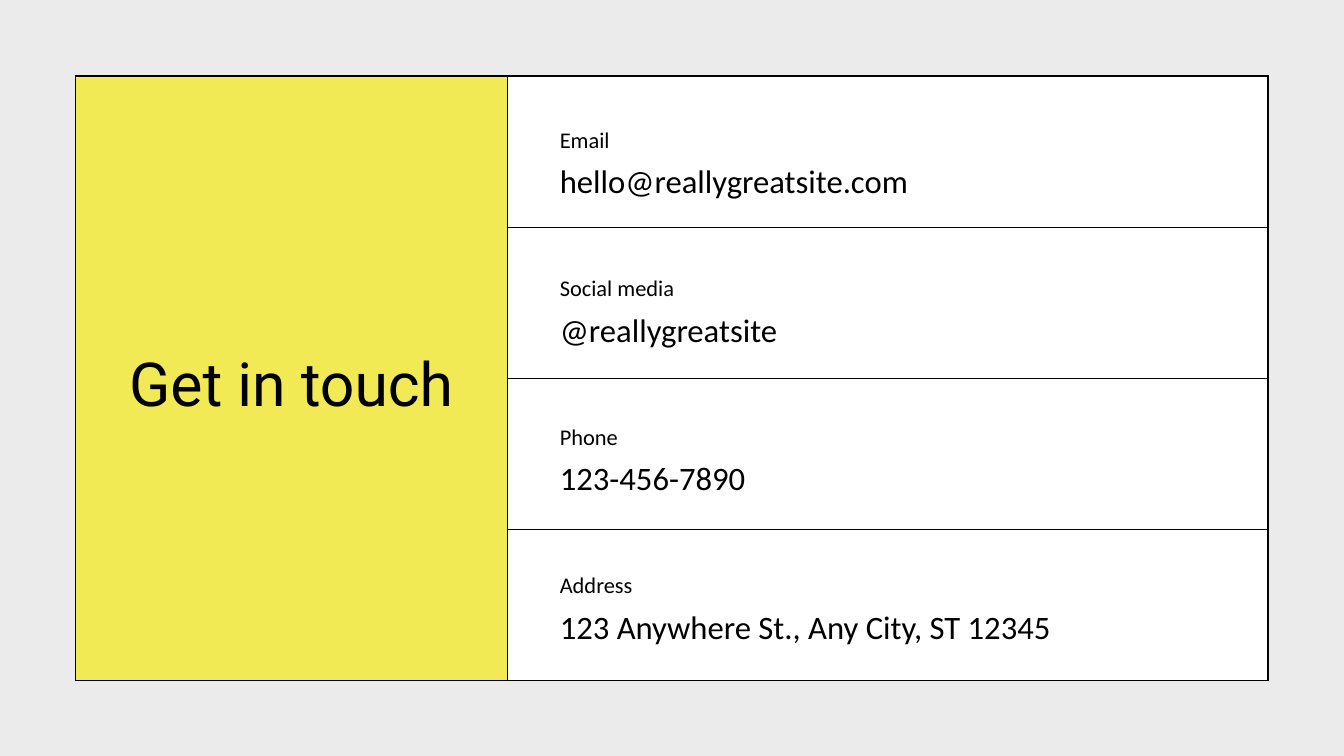
"""Build a contact slide with a title panel and four contact rows."""
from lxml import etree
from pptx import Presentation
from pptx import util as u
from pptx.dml.color import RGBColor
from pptx.enum import text
from pptx.oxml.ns import qn

BLACK = RGBColor(0x00, 0x00, 0x00)
WHITE = RGBColor(0xFF, 0xFF, 0xFF)
YELLOW = RGBColor(0xF1, 0xEA, 0x55)
GREY = RGBColor(0xEB, 0xEB, 0xEB)

COLUMN_WIDTHS = (6.43, 11.32)
ROW_HEIGHT = 2.25
CONTACT_LEFT, CONTACT_TOP, CONTACT_WIDTH = 8.33, 1.67, 9.71
CONTACT_PITCH = 2.21
CONTACTS = (
    ("Email", "hello@reallygreatsite.com"),
    ("Social media", "@reallygreatsite"),
    ("Phone", "123-456-7890"),
    ("Address", "123 Anywhere St., Any City, ST 12345"),
)


class ContactSlide:
    def __init__(self, slide):
        self.slide = slide
        self.title_font = "Roboto"
        self.body_font = "Calibri"
        self.border_width = u.Pt(1.5)

    def background(self, color):
        fill = self.slide.background.fill
        fill.solid()
        fill.fore_color.rgb = color

    def set_text(self, paragraph, words, size, font_name, line_spacing):
        paragraph.text = words
        paragraph.line_spacing = line_spacing
        paragraph.font.size = u.Pt(size)
        paragraph.font.name = font_name
        paragraph.font.color.rgb = BLACK

    def format_cell(self, cell, color):
        properties = cell._tc.get_or_add_tcPr()
        for side in ("lnL", "lnR", "lnT", "lnB"):
            line = etree.SubElement(properties, qn(f"a:{side}"), w=str(self.border_width))
            fill = etree.SubElement(line, qn("a:solidFill"))
            etree.SubElement(fill, qn("a:srgbClr"), val=str(BLACK))
        cell.fill.solid()
        cell.fill.fore_color.rgb = color

    def panel(self, title, row_count):
        frame = self.slide.shapes.add_table(
            row_count, len(COLUMN_WIDTHS), u.Inches(1.12), u.Inches(1.13),
            u.Inches(sum(COLUMN_WIDTHS)), u.Inches(row_count * ROW_HEIGHT))
        table = frame.table
        table.first_row = table.horz_banding = False
        for column, width in zip(table.columns, COLUMN_WIDTHS):
            column.width = u.Inches(width)
        for row in table.rows:
            row.height = u.Inches(ROW_HEIGHT)
            for cell, color in zip(row.cells, (YELLOW, WHITE)):
                self.format_cell(cell, color)
        cell = table.cell(0, 0)
        cell.merge(table.cell(row_count - 1, 0))
        cell.vertical_anchor = text.MSO_ANCHOR.MIDDLE
        cell.margin_left = cell.margin_right = u.Inches(0.21)
        cell.margin_top = cell.margin_bottom = u.Inches(0.21)
        paragraph = cell.text_frame.paragraphs[0]
        self.set_text(paragraph, title, 65, self.title_font, 1.2)
        paragraph.alignment = text.PP_ALIGN.CENTER

    def text_box(self, group, words, top, height, size, line_spacing):
        shape = group.shapes.add_textbox(
            u.Inches(CONTACT_LEFT), u.Inches(top), u.Inches(CONTACT_WIDTH), u.Inches(height))
        frame = shape.text_frame
        frame.word_wrap = True
        frame.auto_size = text.MSO_AUTO_SIZE.SHAPE_TO_FIT_TEXT
        frame.margin_left = frame.margin_right = 0
        frame.margin_top = frame.margin_bottom = 0
        self.set_text(frame.paragraphs[0], words, size, self.body_font, line_spacing)

    def contact(self, label, detail, top):
        group = self.slide.shapes.add_group_shape()
        self.text_box(group, label, top, 0.52, 24, 1.5)
        self.text_box(group, detail, top + 0.49, 0.71, 35, 1.4)


def main():
    presentation = Presentation()
    presentation.slide_width = u.Inches(20)
    presentation.slide_height = u.Inches(11.25)
    blank_layout = presentation.slide_layouts[6]
    contact_slide = ContactSlide(presentation.slides.add_slide(blank_layout))
    contact_slide.background(GREY)
    contact_slide.panel("Get in touch", len(CONTACTS))
    for index, (label, detail) in enumerate(CONTACTS):
        contact_slide.contact(label, detail, CONTACT_TOP + index * CONTACT_PITCH)
    presentation.save("out.pptx")


if __name__ == "__main__":
    main()
